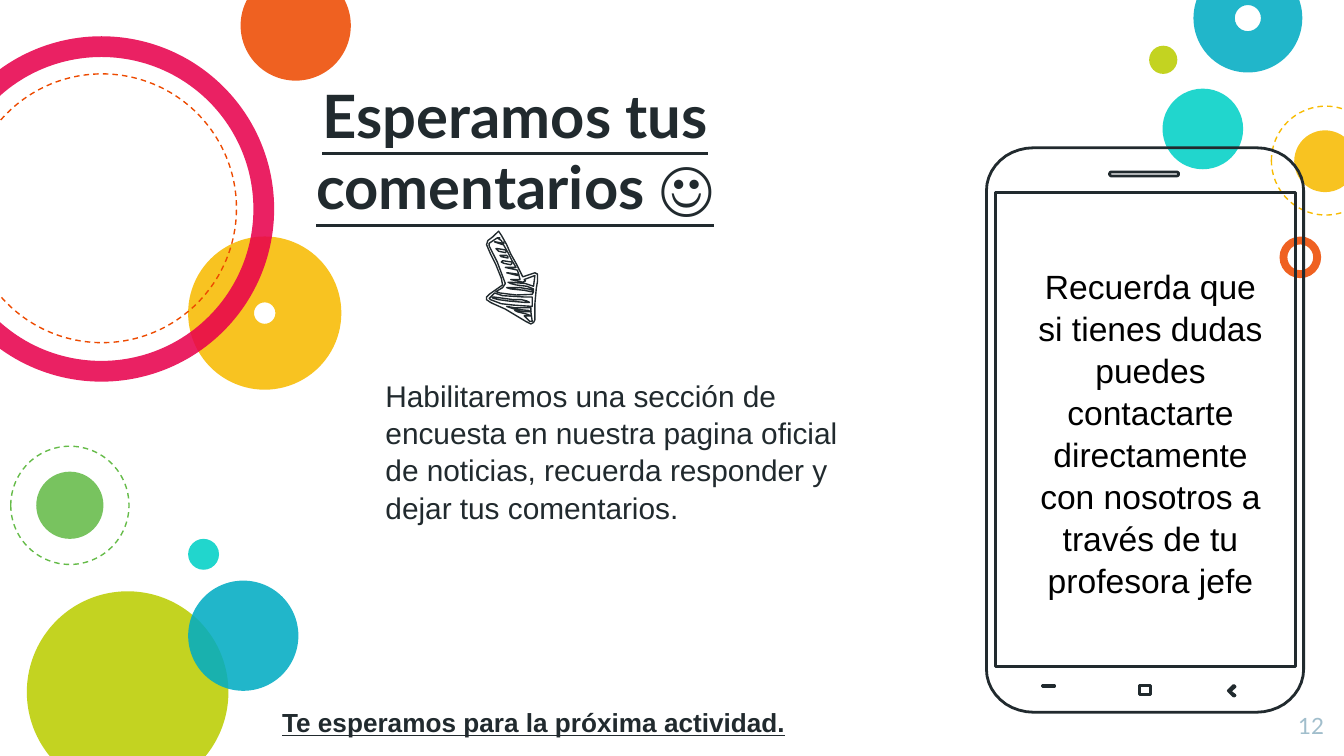
from math import cos, pi, sin

from lxml import etree
from pptx import Presentation
from pptx.dml.color import RGBColor
from pptx.enum.dml import MSO_LINE
from pptx.enum.shapes import MSO_SHAPE
from pptx.enum.text import MSO_ANCHOR, PP_ALIGN
from pptx.oxml.ns import qn
from pptx.util import Emu, Inches, Pt

# Grid of square cells: 100 columns by 56.25 rows
CELL = Inches(0.1)
COLUMNS, ROWS = 100, 56.25

TURQUOISE = RGBColor(0x00, 0xD1, 0xC6)
LIME = RGBColor(0xBB, 0xCD, 0x00)
GREEN = RGBColor(0x65, 0xBB, 0x48)
YELLOW = RGBColor(0xF8, 0xBB, 0x00)
ORANGE = RGBColor(0xED, 0x4A, 0x00)
PINK = RGBColor(0xE8, 0x00, 0x4C)
BLUE = RGBColor(0x00, 0xAC, 0xC3)
INK = RGBColor(0x21, 0x2A, 0x2E)
MIST = RGBColor(0xA1, 0xBE, 0xCC)
BLACK = RGBColor(0x00, 0x00, 0x00)
WHITE = RGBColor(0xFF, 0xFF, 0xFF)


def cells(*counts):
    return [Emu(round(count * CELL)) for count in counts]


def draw_outline(contours, line_width, fill=None):
    """Draw closed contours, given in grid cells, as one freeform."""
    contours = [[(x * 100, y * 100) for x, y in contour] for contour in contours]
    builder = slide.shapes.build_freeform(*contours[0][0], scale=CELL / 100)
    builder.add_line_segments(contours[0][1:], close=True)
    for contour in contours[1:]:
        builder.move_to(*contour[0])
        builder.add_line_segments(contour[1:], close=True)
    outline = builder.convert_to_shape()
    outline.shadow.inherit = False
    outline.line.color.rgb = INK
    outline.line.width = Pt(line_width)
    if fill is None:
        outline.fill.background()
    else:
        outline.fill.solid()
        outline.fill.fore_color.rgb = fill


prs = Presentation()
prs.slide_width, prs.slide_height = cells(COLUMNS, ROWS)
slide = prs.slides.add_slide(prs.slide_layouts[6])

# Decorative circles: left, top, diameter, colour, style (ring = share of hole edge)
DISC, DASHED = "disc", "dashed"
circles = [
    (14, 40.1, 2.3, TURQUOISE, DISC),
    (2, 44, 15, LIME, DISC),
    (2.7, 35.1, 5, GREEN, DISC),
    (0.8, 33.2, 8.8, GREEN, DASHED),
    (14, 17.6, 11.4, YELLOW, 0.43),
    (17.9, -2.2, 8.2, ORANGE, DISC),
    (-5.3, 2.7, 25.7, PINK, 0.06),
    (-2.4, 5.5, 20, ORANGE, DASHED),
    (14, 43.2, 8.2, BLUE, DISC),
    (86.5, 6.6, 6, TURQUOISE, DISC),
    (95.2, 17.6, 3.1, ORANGE, 0.19),
    (96.3, 9.7, 4.6, YELLOW, DISC),
    (88.8, -2.7, 8.1, BLUE, 0.38),
    (85.5, 3.4, 2.1, LIME, DISC),
    (94.6, 7.9, 8.1, YELLOW, DASHED),
]
for left, top, diameter, colour, style in circles:
    is_ring = style not in (DISC, DASHED)
    preset = MSO_SHAPE.DONUT if is_ring else MSO_SHAPE.OVAL
    circle = slide.shapes.add_shape(preset, *cells(left, top, diameter, diameter))
    circle.shadow.inherit = False
    if is_ring:
        circle.adjustments[0] = style
    if style == DASHED:
        circle.fill.background()
        circle.line.color.rgb = colour
        circle.line.width = Pt(0.75)
        circle.line.dash_style = MSO_LINE.DASH
    else:
        circle.line.fill.background()
        circle.fill.solid()
        circle.fill.fore_color.rgb = colour
        solid_colour = circle.fill._xPr.find(qn("a:solidFill"))[0]
        etree.SubElement(solid_colour, qn("a:alpha")).set("val", "87000")

# Phone: rounded contours as left, top, right, bottom, corner width, corner height
phone = []
for left, top, right, bottom, rx, ry in [
    (73.4, 11, 97, 53, 3.5, 3.2),  # body
    (82.56, 12.8, 87.7, 13.1, 0.15, 0.15),  # speaker
    (84.8, 51, 85.6, 51.7, 0.05, 0.05),  # home button
]:
    corners = [(right - rx, bottom - ry), (left + rx, bottom - ry),
               (left + rx, top + ry), (right - rx, top + ry)]
    phone.append([
        (x + rx * cos((turn + step / 10) * pi / 2), y + ry * sin((turn + step / 10) * pi / 2))
        for turn, (x, y) in enumerate(corners) for step in range(11)
    ])
for left, top, right, bottom in [(74.1, 14.3, 96.4, 49.6), (77.6, 51, 78.5, 51.1)]:
    phone.append([(left, top), (right, top), (right, bottom), (left, bottom)])
phone.append([(91.8, 51), (91.9, 51.1), (91.5, 51.45), (91.9, 51.75), (91.8, 51.8), (91.4, 51.4)])
draw_outline(phone, 1.5)

# Hand-drawn arrow: edge and hatched areas, then the loose strokes
arrow = [
    [(39.8, 20.3), (39.5, 20.4), (38.9, 20.6), (38.4, 19.6), (38, 18.9), (37.7, 18.2),
     (37.3, 17.5), (37.1, 17.2), (36.9, 17.4), (36.7, 17.6), (36.3, 17.9), (36.2, 18.2),
     (36.5, 18.9), (36.9, 19.7), (37.3, 20.7), (37.4, 21.2), (36.4, 21.9), (36.2, 22.1),
     (36.2, 22.3), (36.5, 22.5), (36.7, 22.6), (37.6, 23), (39.1, 23.9), (39.5, 24.1),
     (39.7, 24), (39.8, 23.8), (39.8, 22.6), (39.9, 21.5), (40, 20.9), (40, 20.4)],
    [(39.5, 23.2), (39.6, 23.9), (39.4, 23.9), (39, 23.5), (39.5, 23.5), (39.3, 23.4),
     (38.5, 23.2), (38.3, 23.1), (38.4, 23.1), (39.2, 23.2)],
    [(39.5, 23.2), (39.3, 23.1), (38.3, 23), (38, 22.9), (37.7, 22.8), (38.3, 22.9),
     (39.3, 22.9), (39.5, 22.9)],
    [(39.6, 22.8), (38.2, 22.7), (37.3, 22.6), (36.5, 22.3), (36.4, 22.2), (36.8, 21.8),
     (37.1, 21.9), (37.4, 22), (39, 22.1), (39.6, 22.1)],
    [(39.7, 21.3), (39.1, 21.1), (38, 21), (37.8, 21), (38, 21.1), (38.4, 21.2),
     (39.2, 21.3), (39.7, 21.5), (39.7, 21.6), (39.3, 21.5), (38.7, 21.4), (38, 21.4),
     (37.7, 21.4), (38, 21.5), (39, 21.6), (39.5, 21.7), (39.7, 21.7), (39.6, 21.9),
     (38.4, 21.95), (37.2, 21.8), (36.9, 21.7), (37.4, 21.4), (37.6, 21.1), (37, 19.5),
     (36.4, 18.3), (36.4, 18.1), (37, 17.7), (37.2, 17.7), (37, 17.7), (37.3, 17.9),
     (37.4, 18.1), (37.8, 18.8), (38.1, 19.4), (38.4, 19.9), (37.6, 19.9), (38.5, 20.1),
     (38.7, 20.8), (38, 20.8), (38.9, 21), (39.1, 20.9), (39, 20.8), (39.8, 20.5)],
]
strokes = [
    [(38, 19.7), (38.1, 19.6), (38.1, 19.5), (37.4, 19.4), (37.3, 19.5), (37.5, 19.6)],
    [(37.6, 18.8), (37.7, 18.7), (37.6, 18.6), (37, 18.5), (36.9, 18.5), (37.1, 18.7)],
    [(38.5, 20.5), (38.6, 20.4), (38.5, 20.4), (37.8, 20.3), (37.7, 20.3)],
    [(37.8, 19.2), (37.8, 19.1), (37.7, 19), (37.3, 19), (37.2, 19), (37.3, 19.1)],
    [(36.9, 18), (36.8, 18), (37.4, 18.2), (37.5, 18.1), (37.5, 18), (37.4, 18.1)],
    [(38.8, 22.3), (38.2, 22.3), (36.7, 22.1), (36.6, 22.1), (36.7, 22.2), (37.1, 22.3),
     (37.8, 22.4), (39, 22.5), (39.4, 22.5), (39.2, 22.4)],
]
for contours in [arrow] + [[stroke] for stroke in strokes]:
    draw_outline(contours, 0.75, WHITE)

# Texts: box, horizontal and vertical inset, wording, size, font, colour,
# emphasis (bold and underlined), alignment, anchor, line spacing
texts = [
    ((94.4, 52, 5.1, 4.3), (1, 1), "12", 12, "Lato", MIST, False,
     PP_ALIGN.RIGHT, MSO_ANCHOR.TOP, 1),
    ((76.7, 19.7, 17.8, 22.5), (0, 0),
     "Recuerda que si tienes dudas puedes contactarte directamente con nosotros "
     "a través de tu profesora jefe",
     18, "Arial", BLACK, False, PP_ALIGN.CENTER, MSO_ANCHOR.TOP, 1.04),
    ((21.2, 5.6, 34.3, 10.9), (0, 0), "Esperamos tus comentarios ☺", 32, "Lato", INK, True,
     PP_ALIGN.CENTER, MSO_ANCHOR.BOTTOM, 1),
    ((27.7, 27.5, 36.4, 11.8), (1, 0.5),
     "Habilitaremos una sección de encuesta en nuestra pagina oficial de noticias, "
     "recuerda responder y dejar tus comentarios.",
     16, "Arial", INK, False, PP_ALIGN.LEFT, MSO_ANCHOR.TOP, 1.04),
    ((20, 52, 41.9, 3.4), (1, 0.5), "Te esperamos para la próxima actividad.", 14, "Arial",
     INK, True, PP_ALIGN.LEFT, MSO_ANCHOR.TOP, 1.04),
]
for box, inset, wording, size, font, colour, emphasis, alignment, anchor, spacing in texts:
    frame = slide.shapes.add_textbox(*cells(*box)).text_frame
    frame.word_wrap = True
    frame.vertical_anchor = anchor
    frame.margin_left, frame.margin_top = cells(*inset)
    frame.margin_right, frame.margin_bottom = cells(*inset)
    frame.text = wording
    paragraph = frame.paragraphs[0]
    paragraph.alignment = alignment
    paragraph.line_spacing = spacing
    run_font = paragraph.runs[0].font
    run_font.name = font
    run_font.size = Pt(size)
    run_font.color.rgb = colour
    run_font.bold = run_font.underline = emphasis

prs.save("out.pptx")
